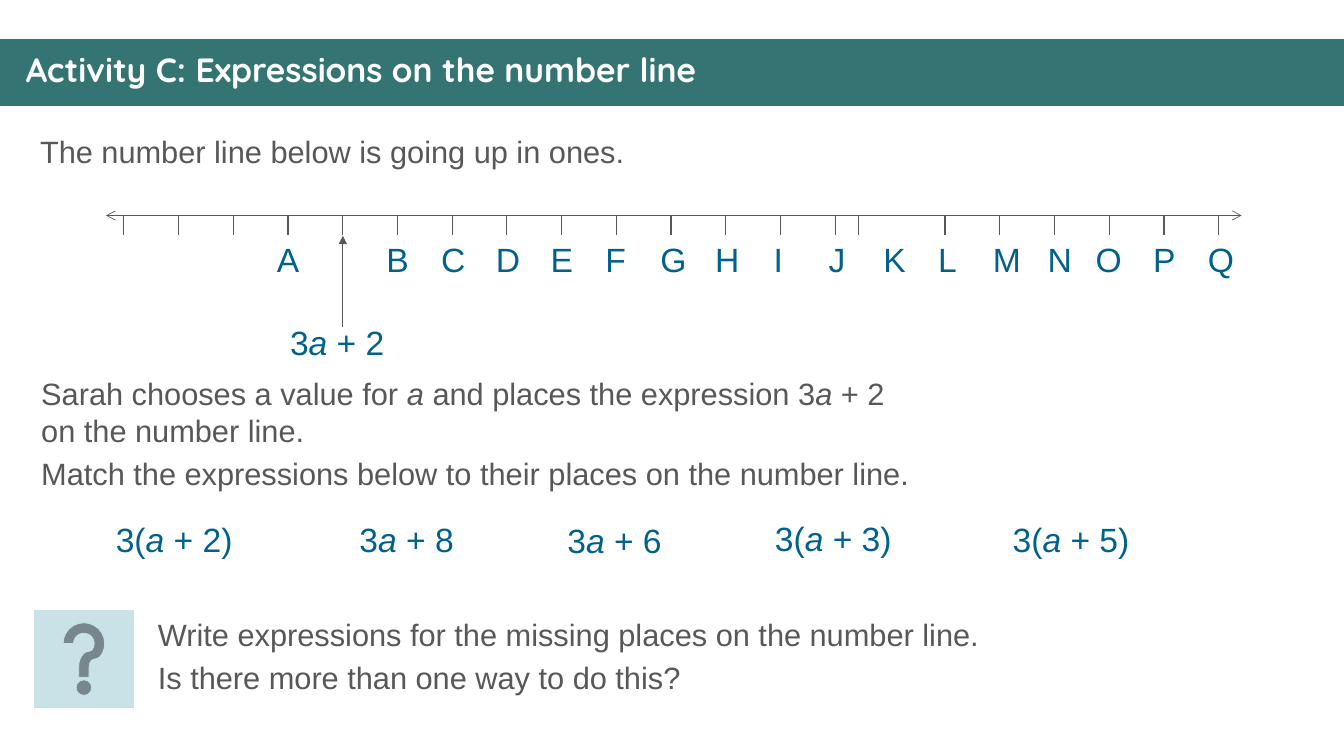
from dataclasses import dataclass

from lxml.etree import SubElement
from pptx import Presentation
from pptx.dml.color import RGBColor
from pptx.enum.shapes import MSO_CONNECTOR as Connector, MSO_SHAPE as Shape
from pptx.enum.text import MSO_AUTO_SIZE as AutoSize
from pptx.oxml.ns import qn
from pptx.util import Cm, Pt


@dataclass(frozen=True)
class Theme:
    teal: str = "347574"
    pale: str = "C8E2E8"
    grey: str = "585858"
    blue: str = "00628C"
    white: str = "FFFFFF"
    body_font: str = "Arial"
    title_font: str = "Quicksand"
    body_size: int = 22
    label_size: int = 24
    thin: float = 0.5
    tick: float = 1


class NumberLinePage:
    def __init__(self, deck, theme):
        self.theme = theme
        self.page = deck.slides.add_slide(deck.slide_layouts[6])

    def block(self, kind, left, top, width, height, color):
        box = self.page.shapes.add_shape(kind, Cm(left), Cm(top), Cm(width), Cm(height))
        box.shadow.inherit = False
        box.fill.solid()
        box.fill.fore_color.rgb = RGBColor.from_string(color)
        box.line.color.rgb = RGBColor.from_string(color)
        box.line.width = Pt(self.theme.thin)
        return box

    def text(self, lines, left, top, width, height, size, color, wrap=True):
        box = self.page.shapes.add_textbox(Cm(left), Cm(top), Cm(width), Cm(height))
        frame = box.text_frame
        frame.word_wrap = wrap
        frame.auto_size = AutoSize.SHAPE_TO_FIT_TEXT
        for index, line in enumerate(lines):
            para = frame.add_paragraph() if index else frame.paragraphs[0]
            para.space_before = Pt(size * 0.2)
            for part, words in enumerate(line.split("*")):
                span = para.add_run()
                span.text = words
                span.font.name = self.theme.body_font
                span.font.size = Pt(size)
                span.font.italic = part % 2 == 1
                span.font.color.rgb = RGBColor.from_string(color)
        return box

    def title(self, words, left, top, width, height):
        theme = self.theme
        box = self.text([words], left, top, width, height, theme.label_size, theme.white)
        box.text_frame.auto_size = AutoSize.NONE
        para = box.text_frame.paragraphs[0]
        para.line_spacing = 0.9
        para.space_before = Pt(10)
        font = para.runs[0].font
        font.name = theme.title_font
        font.bold = True

    def body(self, lines, left, top, width, height, wrap=True):
        self.text(lines, left, top, width, height, self.theme.body_size, self.theme.grey, wrap)

    def label(self, words, left, top, width, wrap=False):
        self.text([words], left, top, width, 1.27, self.theme.label_size, self.theme.blue, wrap)

    def arrow(self, start, end, head=None, tail=None):
        line = self.page.shapes.add_connector(
            Connector.STRAIGHT, *(Cm(value) for value in (*start, *end)))
        line.line.color.rgb = RGBColor.from_string(self.theme.grey)
        line.line.width = Pt(self.theme.thin)
        for tag, kind in (("a:headEnd", head), ("a:tailEnd", tail)):
            if kind:
                SubElement(line.line._get_or_add_ln(), qn(tag), type=kind)
        SubElement(line._element.spPr, qn("a:effectLst"))

    def ticks(self, left, top, height, widths):
        frame = self.page.shapes.add_table(
            1, len(widths), Cm(left), Cm(top), Cm(sum(widths)), Cm(height))
        table = frame.table
        table.first_row = False
        table.horz_banding = False
        table.rows[0].height = Cm(height)
        for index, width in enumerate(widths):
            table.columns[index].width = Cm(width)
            cell = table.cell(0, index)
            cell.margin_left = cell.margin_right = cell.margin_top = cell.margin_bottom = 0
            SubElement(cell.text_frame.paragraphs[0]._p, qn("a:endParaRPr"), sz="600")
            self.borders(cell)
            cell.fill.background()

    def borders(self, cell):
        props = cell._tc.get_or_add_tcPr()
        for side in "LRT":
            edge = SubElement(props, qn(f"a:ln{side}"), w=str(Pt(self.theme.tick)))
            fill = SubElement(edge, qn("a:solidFill"))
            SubElement(fill, qn("a:srgbClr"), val=self.theme.grey)
        SubElement(SubElement(props, qn("a:lnB")), qn("a:noFill"))


def main():
    deck = Presentation()
    deck.slide_width = Cm(33.87)
    deck.slide_height = Cm(19.05)
    theme = Theme()
    sheet = NumberLinePage(deck, theme)

    sheet.block(Shape.RECTANGLE, 0, 1, 33.87, 1.65, theme.teal)
    sheet.title("Activity C: Expressions on the number line", 0.4, 1.22, 33.12, 1.19)
    sheet.body(["The number line below is going up in ones."], 0.76, 3.22, 15.42, 1.19, False)

    step = 1.38
    sheet.ticks(3.12, 5.43, 0.5, [step] * 13 + [0.59, 2.18] + [step] * 5)
    sheet.arrow((2.67, 5.43), (31.29, 5.43), "arrow", "arrow")
    sheet.arrow((8.64, 8.23), (8.64, 5.94), tail="triangle")

    nudges = {"O": -0.07, **dict.fromkeys("IJKLMN", 0.1)}
    for slot, letter in enumerate("A BCDEFGHIJKLMNOPQ"):
        if letter != " ":
            left = 6.73 + slot * step + nudges.get(letter, 0)
            sheet.label(letter, left, 5.89, 1.4 if letter in "HOPQ" else 1.1, True)

    sheet.label("3*a* + 2", 7.06, 7.98, 2.92)
    sheet.body(["Sarah chooses a value for *a* and places the expression 3*a* + 2 on the number line.",
                "Match the expressions below to their places on the number line."],
               0.79, 9.32, 22.61, 3.28)

    for expression, left, top, width in (
        ("3(*a* + 2)", 2.67, 12.95, 3.48),
        ("3*a* + 8", 8.81, 12.95, 2.92),
        ("3*a* + 6", 14.05, 12.98, 2.92),
        ("3(*a* + 3)", 19.28, 12.93, 3.48),
        ("3(*a* + 5)", 25.27, 12.95, 3.48),
    ):
        sheet.label(expression, left, top, width)

    sheet.block(Shape.ACTION_BUTTON_HELP, 0.86, 15.39, 2.51, 2.44, theme.pale)
    sheet.body(["Write expressions for the missing places on the number line.",
                "Is there more than one way to do this?"], 3.73, 15.39, 21.59, 2.34)
    deck.save("out.pptx")


if __name__ == "__main__":
    main()
